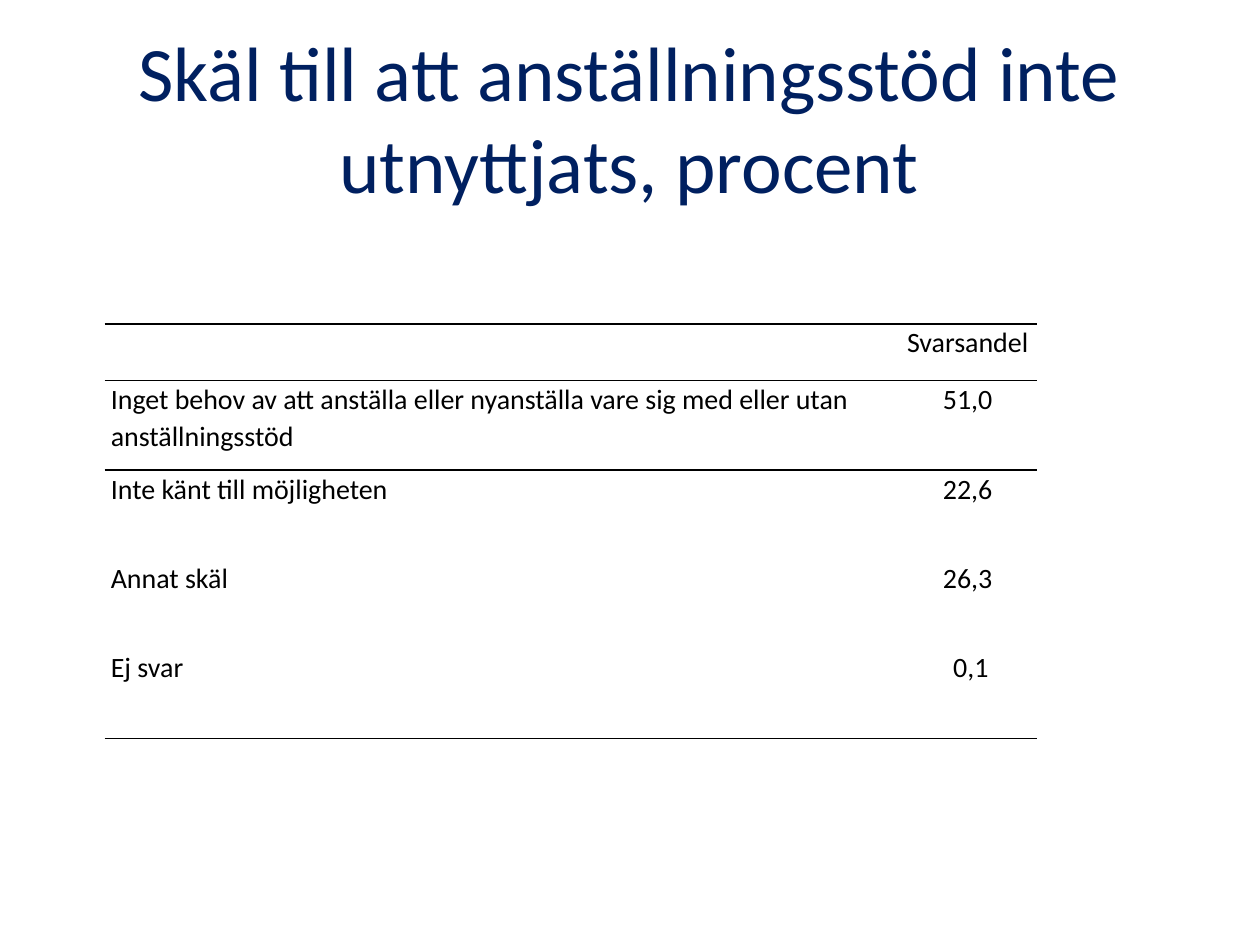
from lxml import etree
from pptx import Presentation
from pptx.dml.color import RGBColor
from pptx.enum.text import MSO_ANCHOR, PP_ALIGN as Align
from pptx.oxml.ns import qn
from pptx.util import Inches, Pt

COLORS = {"title": "002060", "text": "000000", "rule": "000000"}
FONT = "Calibri"
NO_STYLE_NO_GRID = "{2D5ABB26-0587-4C30-8999-92F81FD0307C}"

ANSWERS = [
    ("", "Svarsandel"),
    ("Inget behov av att anställa\u00a0eller nyanställa vare sig med eller utan "
     "anställningsstöd", "51,0"),
    ("Inte känt till möjligheten", "22,6"),
    ("Annat skäl", "26,3"),
    ("Ej svar", " 0,1"),
]
COLUMN_WIDTHS = (6.3, 1.1)
ROW_HEIGHTS = [0.45] + [0.71] * (len(ANSWERS) - 1)


class SlideBuilder:
    def __init__(self, slide):
        self.slide = slide

    def style(self, p, size, color, align):
        p.alignment = align
        for r in p.runs:
            r.font.name = FONT
            r.font.size = Pt(size)
            r.font.color.rgb = RGBColor.from_string(COLORS[color])

    def title(self, text, left, top, width, height):
        sp = self.slide.shapes.title
        sp.left, sp.top = Inches(left), Inches(top)
        sp.width, sp.height = Inches(width), Inches(height)
        tf = sp.text_frame
        tf.text = text
        tf.word_wrap = True
        tf.vertical_anchor = MSO_ANCHOR.MIDDLE
        self.style(tf.paragraphs[0], 44, "title", Align.CENTER)

    def table(self, rows, left, top, widths, heights):
        """Add an unfilled table ruled around its header and at its foot."""
        frame = self.slide.shapes.add_table(
            len(rows), len(widths), Inches(left), Inches(top),
            Inches(sum(widths)), Inches(sum(heights)))
        table = frame.table
        table.horz_banding = False
        frame._element.find(".//" + qn("a:tableStyleId")).text = NO_STYLE_NO_GRID
        for column, width in zip(table.columns, widths):
            column.width = Inches(width)
        for row, height in zip(table.rows, heights):
            row.height = Inches(height)
        for i, texts in enumerate(rows):
            sides = {0: ("lnT", "lnB"), 1: ("lnT",), len(rows) - 1: ("lnB",)}.get(i, ())
            for j, text in enumerate(texts):
                cell = table.cell(i, j)
                self.cell(cell, text, Align.CENTER if j else Align.LEFT)
                self.borders(cell, sides)

    def cell(self, cell, text, align):
        cell.margin_left = cell.margin_right = Inches(0.05)
        cell.margin_top = cell.margin_bottom = 0
        cell.fill.background()
        cell.text = text
        p = cell.text_frame.paragraphs[0]
        p.line_spacing = 1.07
        self.style(p, 16, "text", align)

    def borders(self, cell, sides):
        """Draw the given sides, placed before the fill as the schema requires."""
        tc_pr = cell._tc.get_or_add_tcPr()
        for position, side in enumerate(sides):
            line = etree.Element(qn("a:" + side), w=str(Pt(1)))
            fill = etree.SubElement(line, qn("a:solidFill"))
            etree.SubElement(fill, qn("a:srgbClr"), val=COLORS["rule"])
            tc_pr.insert(position, line)


def main():
    prs = Presentation()
    prs.slide_width, prs.slide_height = Inches(10), Inches(7.5)
    builder = SlideBuilder(prs.slides.add_slide(prs.slide_layouts[5]))
    builder.title("Skäl till att anställningsstöd inte utnyttjats, procent",
                  0.5, 0.3, 8.99, 1.25)
    builder.table(ANSWERS, 0.83, 2.57, COLUMN_WIDTHS, ROW_HEIGHTS)
    prs.save("out.pptx")


if __name__ == "__main__":
    main()
